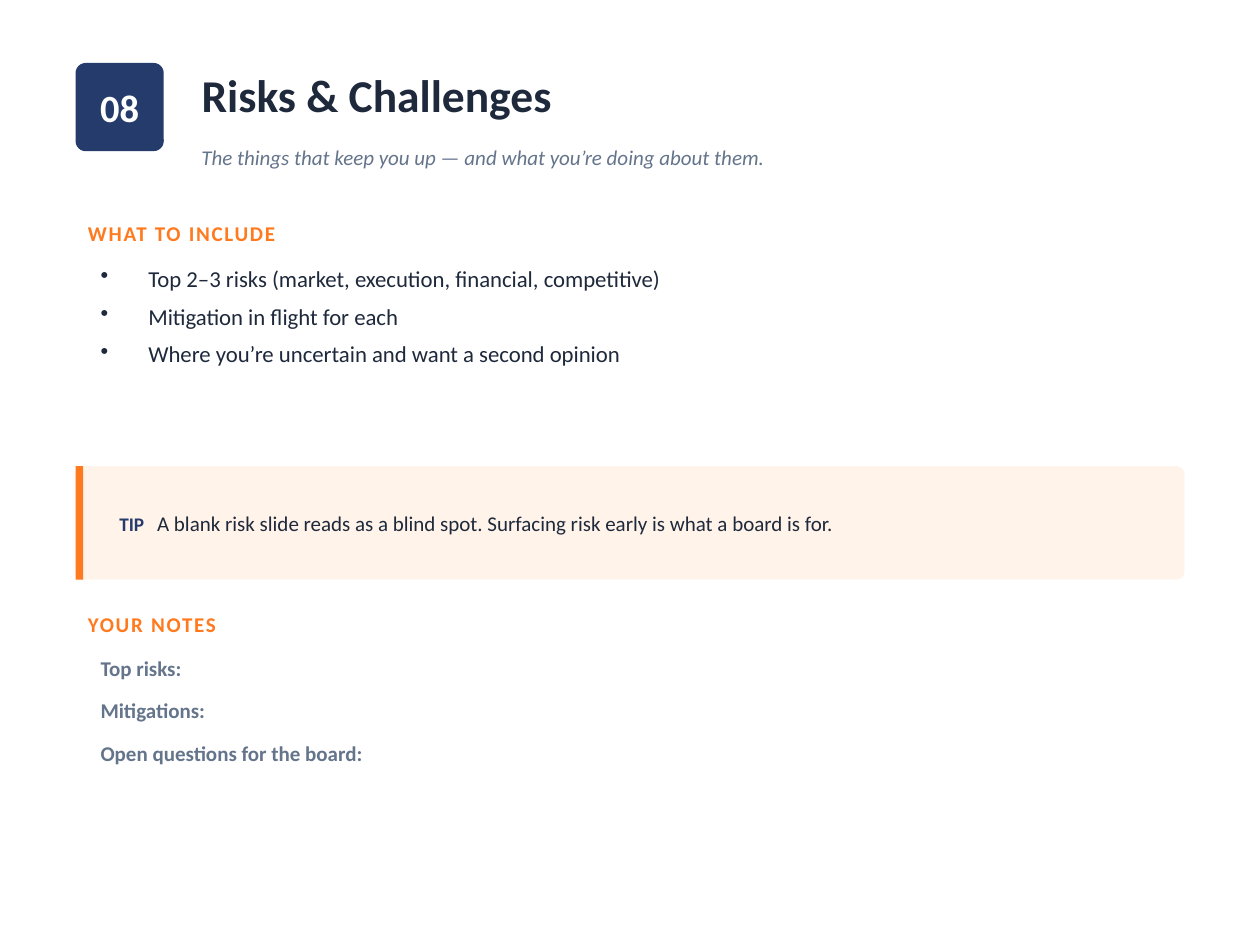
import pptx
import pptx.dml.color
import pptx.enum.shapes
import pptx.enum.text
import pptx.oxml.ns
import pptx.util
from lxml import etree

Inches = pptx.util.Inches
Pt = pptx.util.Pt
RGBColor = pptx.dml.color.RGBColor
SHAPES = pptx.enum.shapes.MSO_SHAPE
ALIGN = pptx.enum.text.PP_ALIGN
ANCHOR = pptx.enum.text.MSO_ANCHOR

FONT = "Calibri"
NAVY = RGBColor(0x25, 0x3B, 0x6C)
INK = RGBColor(0x1E, 0x29, 0x3B)
SLATE = RGBColor(0x64, 0x74, 0x8B)
ORANGE = RGBColor(0xFF, 0x7A, 0x1F)
CREAM = RGBColor(0xFF, 0xF3, 0xEA)
WHITE = RGBColor(0xFF, 0xFF, 0xFF)

MARGIN = 0.6
CONTENT_WIDTH = 8.8
HEADER_LEFT, HEADER_WIDTH = 1.5, 7.9
BODY_LEFT, BODY_WIDTH = 0.7, 8.7
CORNER_RADIUS = 0.08 - 0.02

INCLUDE_ITEMS = [
    "Top 2–3 risks (market, execution, financial, competitive)",
    "Mitigation in flight for each",
    "Where you’re uncertain and want a second opinion",
]
NOTE_PROMPTS = ["Top risks:", "Mitigations:", "Open questions for the board:"]


def format_run(run, size, color, bold=False, italic=False):
    run.font.name = FONT
    run.font.size = Pt(size)
    run.font.color.rgb = color
    run.font.bold = bold
    run.font.italic = italic


def fill_text(frame, lines, size, color, space_after=0, anchor=ANCHOR.MIDDLE,
              align=ALIGN.LEFT, **style):
    """Write one paragraph per line, all in the same style."""
    frame.word_wrap = True
    frame.auto_size = pptx.enum.text.MSO_AUTO_SIZE.NONE
    frame.vertical_anchor = anchor
    frame.text = "\n".join(lines)
    for paragraph in frame.paragraphs:
        paragraph.alignment = align
        paragraph.space_after = Pt(space_after)
        for run in paragraph.runs:
            format_run(run, size, color, **style)


def add_text(slide, left, top, width, height, lines, size, color, **style):
    box = slide.shapes.add_textbox(
        Inches(left), Inches(top), Inches(width), Inches(height))
    fill_text(box.text_frame, lines, size, color, **style)
    return box.text_frame


def add_block(slide, kind, left, top, width, height, color):
    block = slide.shapes.add_shape(
        kind, Inches(left), Inches(top), Inches(width), Inches(height))
    block.shadow.inherit = False
    block.fill.solid()
    block.fill.fore_color.rgb = color
    block.line.fill.background()
    if kind == SHAPES.ROUNDED_RECTANGLE:
        block.adjustments[0] = 0.08 / height if height < 0.8 else CORNER_RADIUS / height
    return block


def add_bullets(frame, indent):
    for paragraph in frame.paragraphs:
        properties = paragraph._p.get_or_add_pPr()
        properties.set("marL", str(Inches(indent)))
        properties.set("indent", str(-Inches(indent)))
        bullet = etree.SubElement(properties, pptx.oxml.ns.qn("a:buChar"))
        bullet.set("char", "•")


def add_section_heading(slide, top, heading):
    frame = add_text(slide, MARGIN, top, CONTENT_WIDTH, 0.3, [heading],
                     12, ORANGE, bold=True)
    letter_spacing = str(100)
    frame.paragraphs[0].runs[0].font._element.set("spc", letter_spacing)


def add_header(slide, number, title, subtitle):
    badge = add_block(slide, SHAPES.ROUNDED_RECTANGLE, MARGIN, 0.5, 0.7, 0.7, NAVY)
    fill_text(badge.text_frame, [number], 22, WHITE, align=ALIGN.CENTER, bold=True)

    heading = slide.shapes.title
    heading.left, heading.top = Inches(HEADER_LEFT), Inches(0.5)
    heading.width, heading.height = Inches(HEADER_WIDTH), Inches(0.5)
    fill_text(heading.text_frame, [title], 26, INK, bold=True)

    add_text(slide, HEADER_LEFT, 1, HEADER_WIDTH, 0.5, [subtitle],
             12, SLATE, italic=True)


def add_tip(slide, top, height, label, advice):
    card = add_block(slide, SHAPES.ROUNDED_RECTANGLE,
                     MARGIN, top, CONTENT_WIDTH, height, CREAM)
    add_block(slide, SHAPES.RECTANGLE, MARGIN, top, 0.06, height, ORANGE)
    frame = card.text_frame
    fill_text(frame, [label], 11, NAVY, bold=True)
    frame.margin_left = Inches(0.33)

    paragraph = frame.paragraphs[0]
    tabs = etree.SubElement(paragraph._p.get_or_add_pPr(),
                            pptx.oxml.ns.qn("a:tabLst"))
    etree.SubElement(tabs, pptx.oxml.ns.qn("a:tab"),
                     pos=str(Inches(0.3)), algn="l")
    advice_run = paragraph.add_run()
    advice_run.text = "\t" + advice
    format_run(advice_run, 12, INK)


def main():
    deck = pptx.Presentation()
    deck.slide_width, deck.slide_height = Inches(10), Inches(7.5)
    title_only = deck.slide_layouts[5]
    slide = deck.slides.add_slide(title_only)
    slide.background.fill.solid()
    slide.background.fill.fore_color.rgb = WHITE

    add_header(slide, "08", "Risks & Challenges",
               "The things that keep you up — and what you’re doing about them.")

    add_section_heading(slide, 1.7, "WHAT TO INCLUDE")
    include = add_text(slide, BODY_LEFT, 2.05, BODY_WIDTH, 1.5, INCLUDE_ITEMS,
                       13, INK, space_after=6, anchor=ANCHOR.TOP)
    add_bullets(include, 0.38)

    add_tip(slide, 3.7, 0.9, "TIP",
            "A blank risk slide reads as a blind spot. "
            "Surfacing risk early is what a board is for.")

    add_section_heading(slide, 4.8, "YOUR NOTES")
    add_text(slide, BODY_LEFT, 5.15, BODY_WIDTH, 1.9, NOTE_PROMPTS,
             12, SLATE, space_after=10, anchor=ANCHOR.TOP, bold=True)

    deck.save("out.pptx")


if __name__ == "__main__":
    main()
